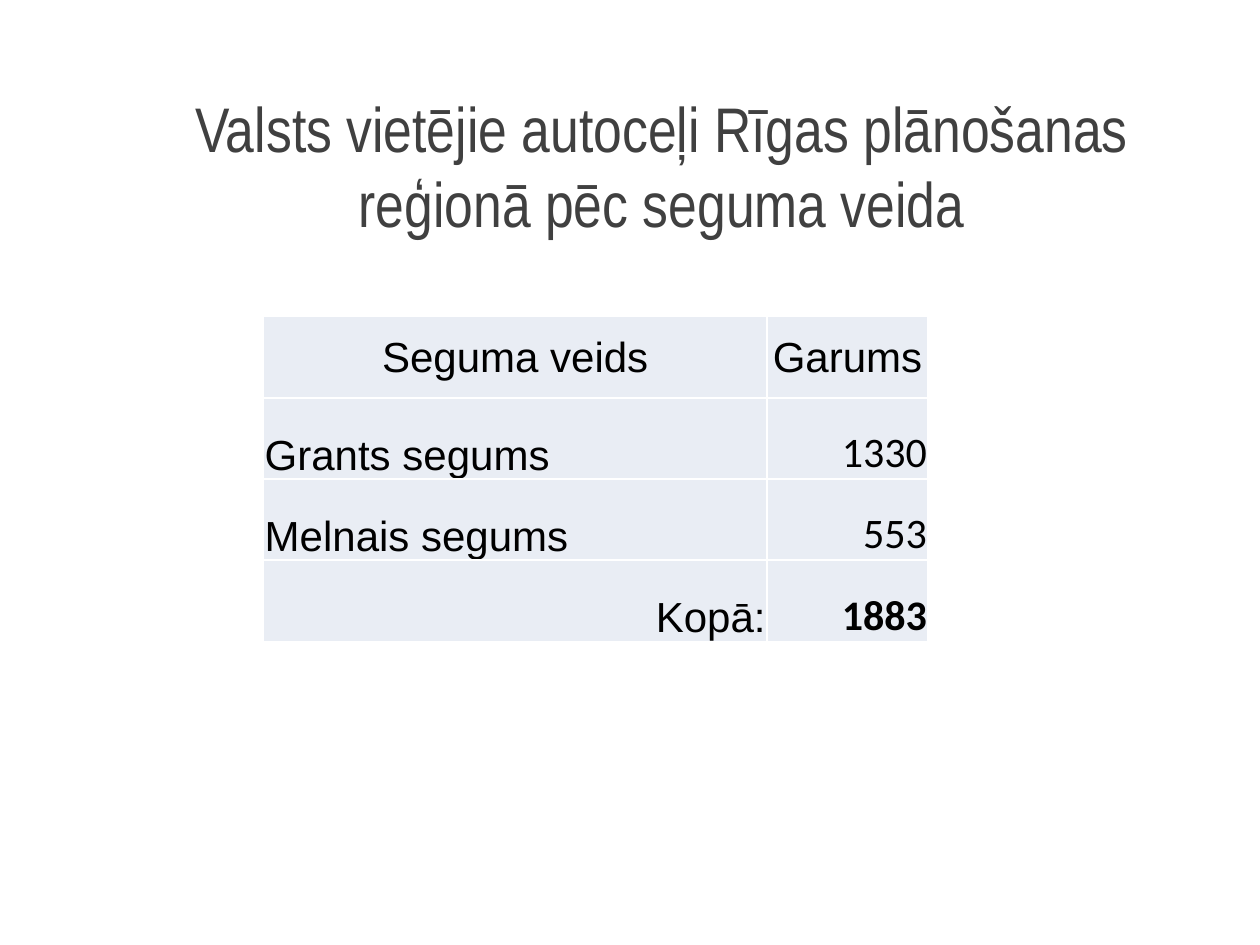
import pptx
import pptx.dml.color
import pptx.enum.text
import pptx.oxml
import pptx.oxml.ns
import pptx.util

Pt = pptx.util.Pt
RGBColor = pptx.dml.color.RGBColor
ALIGN = pptx.enum.text.PP_ALIGN
ANCHOR = pptx.enum.text.MSO_ANCHOR

TITLE_GREY = RGBColor(0x40, 0x40, 0x40)
BLACK = RGBColor(0x00, 0x00, 0x00)
CELL_BLUE = RGBColor(0xE9, 0xED, 0xF4)
WHITE = RGBColor(0xFF, 0xFF, 0xFF)


class SlideBuilder:
    title_font = "Arial Narrow"
    label_font = "Arial"
    number_font = "Calibri"
    title_size = Pt(36)
    table_size = Pt(24)
    border_width = Pt(1)
    cell_inset = Pt(0.7)

    def __init__(self, slide):
        self.slide = slide

    def add_text(self, text_frame, text, font_name, size, color, alignment, bold=False):
        paragraph = text_frame.paragraphs[0]
        paragraph.alignment = alignment
        run = paragraph.add_run()
        run.text = text
        run.font.name = font_name
        run.font.size = size
        run.font.bold = bold
        run.font.color.rgb = color

    def title(self, text, left, top, width, height):
        shape = self.slide.shapes.add_textbox(Pt(left), Pt(top), Pt(width), Pt(height))
        text_frame = shape.text_frame
        text_frame.word_wrap = True
        text_frame.vertical_anchor = ANCHOR.MIDDLE
        self.add_text(text_frame, text, self.title_font, self.title_size,
                      TITLE_GREY, ALIGN.CENTER)

    def borders(self, cell):
        properties = cell._tc.get_or_add_tcPr()
        namespace = pptx.oxml.ns.nsdecls("a")
        for side in ("lnL", "lnR", "lnT", "lnB"):
            properties.append(pptx.oxml.parse_xml(
                f'<a:{side} {namespace} w="{self.border_width}"><a:solidFill>'
                f'<a:srgbClr val="{WHITE}"/></a:solidFill></a:{side}>'))

    def cell(self, cell, text, alignment, anchor, bold):
        self.borders(cell)
        cell.fill.solid()
        cell.fill.fore_color.rgb = CELL_BLUE
        cell.margin_left = cell.margin_right = cell.margin_top = self.cell_inset
        cell.margin_bottom = 0
        cell.vertical_anchor = anchor
        font_name = self.number_font if text.isdigit() else self.label_font
        self.add_text(cell.text_frame, text, font_name, self.table_size,
                      BLACK, alignment, bold)

    def table(self, rows, left, top, column_widths, row_height):
        frame = self.slide.shapes.add_table(
            len(rows), len(column_widths), Pt(left), Pt(top),
            Pt(sum(column_widths)), Pt(row_height * len(rows)))
        table = frame.table
        table.first_row = False
        table.horz_banding = False
        for column, width in zip(table.columns, column_widths):
            column.width = Pt(width)
        last = len(rows) - 1
        for row_index, values in enumerate(rows):
            table.rows[row_index].height = Pt(row_height)
            for column_index, text in enumerate(values):
                if row_index == 0:
                    alignment, anchor = ALIGN.CENTER, ANCHOR.MIDDLE
                else:
                    right = column_index == 1 or row_index == last
                    alignment = ALIGN.RIGHT if right else ALIGN.LEFT
                    anchor = ANCHOR.BOTTOM
                bold = row_index == last and column_index == 1
                self.cell(table.cell(row_index, column_index), text,
                          alignment, anchor, bold)


def main():
    presentation = pptx.Presentation()
    presentation.slide_width = Pt(720)
    presentation.slide_height = Pt(540)
    builder = SlideBuilder(presentation.slides.add_slide(presentation.slide_layouts[6]))
    builder.title("Valsts vietējie autoceļi Rīgas plānošanas reģionā pēc seguma veida",
                  60, 43.2, 636, 102)
    builder.table([
        ("Seguma veids", "Garums"),
        ("Grants segums", "1330"),
        ("Melnais segums", "553"),
        ("Kopā:", "1883"),
    ], 150.6, 181, (287.6, 92.2), 46.4)
    presentation.save("out.pptx")


if __name__ == "__main__":
    main()
